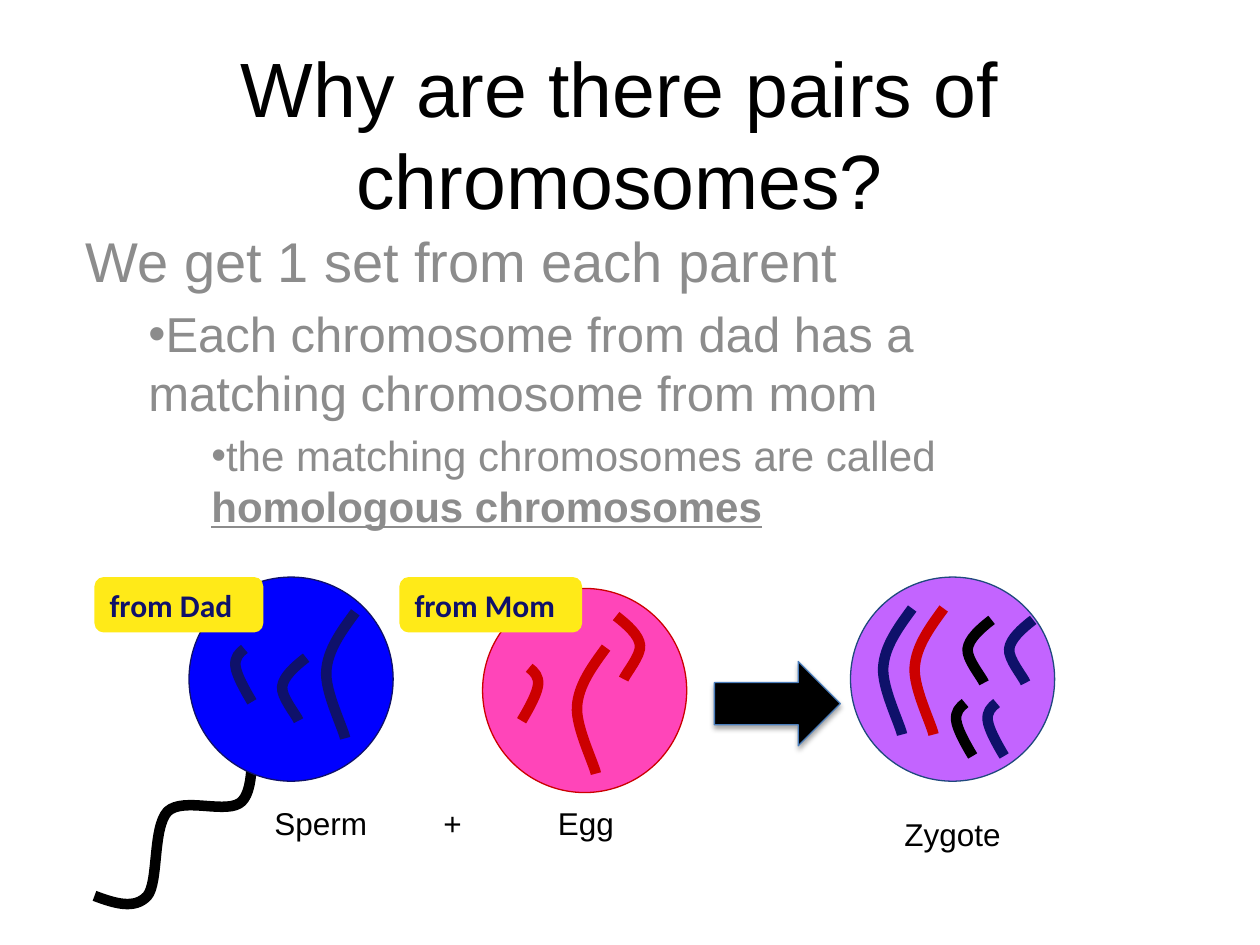
from dataclasses import dataclass

from lxml import etree
from pptx import Presentation
from pptx.dml.color import RGBColor
from pptx.enum.shapes import MSO_SHAPE
from pptx.enum.text import MSO_ANCHOR, PP_ALIGN
from pptx.oxml.ns import qn
from pptx.util import Inches, Pt

OVAL, ARROW, TAG = MSO_SHAPE.OVAL, MSO_SHAPE.RIGHT_ARROW, MSO_SHAPE.ROUNDED_RECTANGLE
MIDDLE, TOP = MSO_ANCHOR.MIDDLE, MSO_ANCHOR.TOP
LEFT, CENTER = PP_ALIGN.LEFT, PP_ALIGN.CENTER


@dataclass(frozen=True)
class Theme:
    font: str = "Arial"
    tag_font: str = "Calibri"
    black: str = "000000"
    grey: str = "8C8C8C"
    navy: str = "0F116A"
    red: str = "CC0000"
    blue: str = "0000FF"
    pink: str = "FF45B9"
    purple: str = "C364FF"
    purple_edge: str = "1F497D"
    arrow_edge: str = "4B7EBC"
    yellow: str = "FFEA18"
    title: int = 44
    body: tuple = (32, 28, 24)
    label: int = 18
    thin: float = 0.75
    thick: float = 6


THEME = Theme()
CELL = 1.62  # diameter of every cell
LABEL_HEIGHT = 0.42


def mirrored(points):
    width = max(x for x, y in points)
    return [(width - x, y) for x, y in points]


# Chromosomes: Bezier points from the top end down
LONG = [(0.24, 0), (0.13, 0.15), (0.02, 0.3), (0.01, 0.47),
        (0, 0.63), (0.14, 0.91), (0.16, 1)]
MEDIUM = [(0.2, 0), (0.11, 0.07), (0.02, 0.15), (0.01, 0.23),
          (0, 0.31), (0.12, 0.45), (0.14, 0.5)]
SHORT = [(0.08, 0), (0.04, 0.03), (0, 0.07), (0.01, 0.14),
         (0.02, 0.21), (0.08, 0.32), (0.14, 0.42)]
TAIL = [(1.25, 0.02), (1.26, 0.01), (1.26, 0), (1.25, 0.11),
        (1.24, 0.22), (1.28, 0.58), (1.17, 0.69),
        (1.06, 0.8), (0.71, 0.65), (0.58, 0.77),
        (0.46, 0.9), (0.51, 1.33), (0.42, 1.44),
        (0.32, 1.55), (0.16, 1.5), (0, 1.44)]


def rgb(color):
    return RGBColor.from_string(color)


def set_font(font, size, color, name=THEME.font, bold=False):
    font.name, font.size, font.bold = name, Pt(size), bold
    font.color.rgb = rgb(color)


def add_text(page, box, text, size, color, align=LEFT, anchor=TOP):
    frame = page.shapes.add_textbox(*map(Inches, box)).text_frame
    frame.word_wrap = True
    frame.vertical_anchor = anchor
    para = frame.paragraphs[0]
    para.text, para.alignment = text, align
    set_font(para.font, size, color)
    return frame


def add_filled(page, kind, box, fill, edge=None):
    shape = page.shapes.add_shape(kind, *map(Inches, box))
    shape.shadow.inherit = False
    shape.fill.solid()
    shape.fill.fore_color.rgb = rgb(fill)
    if edge:
        shape.line.color.rgb = rgb(edge)
        shape.line.width = Pt(THEME.thin)
    else:
        shape.line.fill.background()
    return shape


def add_curve(page, left, top, points, color):
    outline = [(Inches(left + x), Inches(top + y)) for x, y in points]
    builder = page.shapes.build_freeform(*outline[0])
    builder.add_line_segments(outline[1:], close=False)
    curve = builder.convert_to_shape()
    curve.shadow.inherit = False
    curve.fill.background()
    curve.line.color.rgb = rgb(color)
    curve.line.width = Pt(THEME.thick)
    # Every three segments become one cubic curve
    segments = list(curve._element.iter(qn("a:lnTo")))
    for start in range(0, len(segments), 3):
        cubic = etree.Element(qn("a:cubicBezTo"))
        segments[start].addprevious(cubic)
        for segment in segments[start:start + 3]:
            cubic.append(segment[0])
            segment.getparent().remove(segment)


def add_cell(page, left, top, fill, edge, chromosomes):
    """A round cell; chromosome offsets are measured from its corner."""
    add_filled(page, OVAL, (left, top, CELL, CELL), fill, edge)
    for points, x, y, color in chromosomes:
        add_curve(page, left + x, top + y, points, color)


def add_label(page, left, top, width, text):
    add_text(page, (left, top, width, LABEL_HEIGHT), text, THEME.label, THEME.black)


def add_body(page, box):
    lines = ["We get 1 set from each parent",
             "Each chromosome from dad has a matching chromosome from mom",
             "the matching chromosomes are called "]
    frame = add_text(page, box, lines[0], THEME.body[0], THEME.grey)
    for line in lines[1:]:
        frame.add_paragraph().text = line
    for level, (para, size) in enumerate(zip(frame.paragraphs, THEME.body)):
        set_font(para.font, size, THEME.grey)
        para.level = level
        para.space_before = Pt(size * 0.2)
        if level:
            props = para._p.get_or_add_pPr()
            props.set("marL", str(Inches(level * 0.5)))
            props.set("indent", "0")
            run_props = props.find(qn("a:defRPr"))
            run_props.addprevious(etree.Element(qn("a:buFont"), typeface=THEME.font))
            run_props.addprevious(etree.Element(qn("a:buChar"), char="•"))
    span = frame.paragraphs[-1].add_run()
    span.text = "homologous chromosomes"
    span.font.bold = span.font.underline = True


def add_arrow(page, box):
    arrow = add_filled(page, ARROW, box, THEME.black, THEME.arrow_edge)
    effects = arrow._element.spPr.find(qn("a:effectLst"))
    shadow = etree.SubElement(effects, qn("a:outerShdw"), blurRad=str(Pt(3.1)),
                              dist=str(Pt(1.8)), dir="5400000", rotWithShape="0")
    color = etree.SubElement(shadow, qn("a:srgbClr"), val=THEME.black)
    etree.SubElement(color, qn("a:alpha"), val="35000")


def add_tag(page, box, text):
    tag = add_filled(page, TAG, box, THEME.yellow)
    frame = tag.text_frame
    frame.vertical_anchor = MIDDLE
    para = frame.paragraphs[0]
    para.text, para.alignment = text, LEFT
    set_font(para.font, THEME.label, THEME.navy, THEME.tag_font, bold=True)


def add_fertilization(page, left, top):
    """Sperm + egg -> zygote, from the top left corner of the row."""
    navy, red, black = THEME.navy, THEME.red, THEME.black
    label_top = top + 1.75
    # Sperm
    add_curve(page, left, top + 1.09, TAIL, black)
    add_cell(page, left + 0.75, top, THEME.blue, navy,
             [(LONG, 1.08, 0.28, navy), (SHORT, 0.36, 0.57, navy), (MEDIUM, 0.73, 0.64, navy)])
    add_label(page, left + 1.33, label_top, 1.25, "Sperm")
    # Egg
    add_cell(page, left + 3.08, top + 0.09, THEME.pink, red,
             [(mirrored(SHORT), 0.31, 0.63, red), (LONG, 0.74, 0.47, red),
              (mirrored(MEDIUM), 1.06, 0.22, red)])
    add_label(page, left + 3.58, label_top, 1.25, "Egg")
    # Zygote: pairs side by side
    add_cell(page, left + 6, top, THEME.purple, THEME.purple_edge,
             [(kind, x + shift, y, color)
              for kind, x, y, gap, first, second in (
                  (LONG, 0.25, 0.25, 0.25, navy, red),
                  (MEDIUM, 0.92, 0.34, 0.33, black, navy),
                  (SHORT, 0.83, 1, 0.25, black, navy))
              for shift, color in ((0, first), (gap, second))])
    add_label(page, left + 6.33, label_top + 0.09, 1.25, "Zygote")
    # Signs and parent tags
    add_label(page, left + 2.67, label_top, 0.75, "+")
    add_arrow(page, (left + 4.92, top + 0.67, 1, 0.67))
    add_tag(page, (left + 2.42, top, 1.45, 0.44), "from Mom")
    add_tag(page, (left, top, 1.34, 0.44), "from Dad")


def main():
    deck = Presentation()
    deck.slide_width, deck.slide_height = Inches(10), Inches(7.5)
    page = deck.slides.add_slide(deck.slide_layouts[6])
    add_text(page, (0.67, 0.25, 8.5, 1.61), "Why are there pairs of chromosomes?",
             THEME.title, THEME.black, CENTER, MIDDLE)
    add_body(page, (0.58, 1.75, 7.92, 4.17))
    add_fertilization(page, 0.75, 4.58)
    deck.save("out.pptx")


if __name__ == "__main__":
    main()
